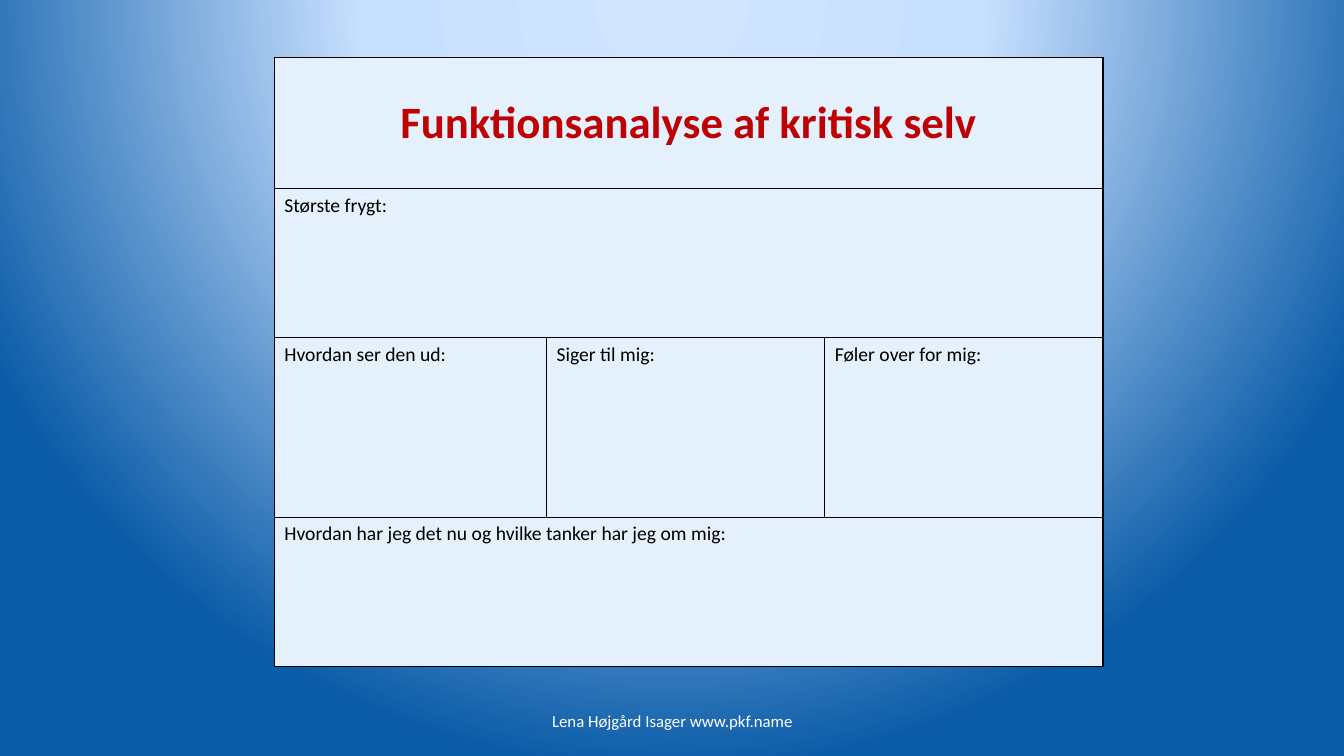
from dataclasses import dataclass

from pptx import Presentation
from pptx.dml.color import RGBColor
from pptx.enum.text import MSO_ANCHOR as Anchor, PP_ALIGN as Align
from pptx.oxml import parse_xml
from pptx.oxml.ns import nsdecls, qn
from pptx.util import Inches, Pt


@dataclass(frozen=True)
class Theme:
    font: str = "Calibri"
    title_size: int = 32
    label_size: int = 14
    footer_size: int = 12
    title: str = "BE0204"
    text: str = "000000"
    footer: str = "FFFFFF"
    cell: str = "E4F0FC"
    border: str = "000000"
    border_width: float = 1
    glow: tuple = ((0, "D1E5FF"), (40, "C8E0FF"), (100, "0B5CA8"))


THEME = Theme()
COLUMN_WIDTHS = (2.7, 2.76, 2.76)
ROW_HEIGHTS = (1.3, 1.48, 1.78, 1.48)
# A row with a single text spans all columns
ROWS = (
    ("Funktionsanalyse af kritisk selv",),
    ("Største frygt:",),
    ("Hvordan ser den ud:", "Siger til mig:", "Føler over for mig:"),
    ("Hvordan har jeg det nu og hvilke tanker har jeg om mig:",),
)


def paint_background(page):
    """Radial glow centred above the slide."""
    page.background.fill.solid()
    stops = "".join(
        f'<a:gs pos="{place * 1000}"><a:srgbClr val="{color}"/></a:gs>'
        for place, color in THEME.glow
    )
    glow = parse_xml(
        f'<a:gradFill {nsdecls("a")} rotWithShape="1"><a:gsLst>{stops}</a:gsLst>'
        '<a:path path="circle"><a:fillToRect l="50000" t="-80000" r="50000" '
        'b="180000"/></a:path></a:gradFill>'
    )
    properties = page.element.find(f".//{qn('p:bgPr')}")
    properties.replace(properties[0], glow)


def write(frame, text, size, color, bold=False, align=Align.LEFT):
    para = frame.paragraphs[0]
    para.alignment = align
    span = para.add_run()
    span.text = text
    for name, value in {"name": THEME.font, "size": Pt(size), "bold": bold}.items():
        setattr(span.font, name, value)
    span.font.color.rgb = RGBColor.from_string(color)


def style_cell(cell):
    cell.fill.solid()
    cell.fill.fore_color.rgb = RGBColor.from_string(THEME.cell)
    properties = cell._tc.get_or_add_tcPr()
    for index, side in enumerate(("lnL", "lnR", "lnT", "lnB")):
        properties.insert(index, parse_xml(
            f'<a:{side} {nsdecls("a")} w="{Pt(THEME.border_width)}"><a:solidFill>'
            f'<a:srgbClr val="{THEME.border}"/></a:solidFill></a:{side}>'
        ))


def add_form(page):
    frame = page.shapes.add_table(
        len(ROWS), len(COLUMN_WIDTHS), Inches(2.72), Inches(0.57),
        Inches(sum(COLUMN_WIDTHS)), Inches(sum(ROW_HEIGHTS)),
    )
    table = frame.table
    for name in ("first_row", "horz_banding"):
        setattr(table, name, False)
    for column, width in zip(table.columns, COLUMN_WIDTHS):
        column.width = Inches(width)
    for row, height in zip(table.rows, ROW_HEIGHTS):
        row.height = Inches(height)
    for cell in table.iter_cells():
        style_cell(cell)

    last = len(COLUMN_WIDTHS) - 1
    for row, texts in enumerate(ROWS):
        if len(texts) == 1:
            table.cell(row, 0).merge(table.cell(row, last))
        for column, text in enumerate(texts):
            cell = table.cell(row, column)
            if row == 0:
                cell.vertical_anchor = Anchor.MIDDLE
                write(cell.text_frame, text, THEME.title_size, THEME.title,
                      bold=True, align=Align.CENTER)
            else:
                write(cell.text_frame, text, THEME.label_size, THEME.text)


def add_footer(page, text):
    box = page.shapes.add_textbox(Inches(4.56), Inches(6.95), Inches(4.22), Inches(0.4))
    frame = box.text_frame
    for name, value in {"word_wrap": True, "vertical_anchor": Anchor.MIDDLE}.items():
        setattr(frame, name, value)
    write(frame, text, THEME.footer_size, THEME.footer, align=Align.CENTER)


def main():
    deck = Presentation()
    deck.slide_width, deck.slide_height = Inches(13.33), Inches(7.5)
    page = deck.slides.add_slide(deck.slide_layouts[6])
    paint_background(page)
    add_footer(page, "Lena Højgård Isager www.pkf.name")
    add_form(page)
    deck.save("out.pptx")


if __name__ == "__main__":
    main()
